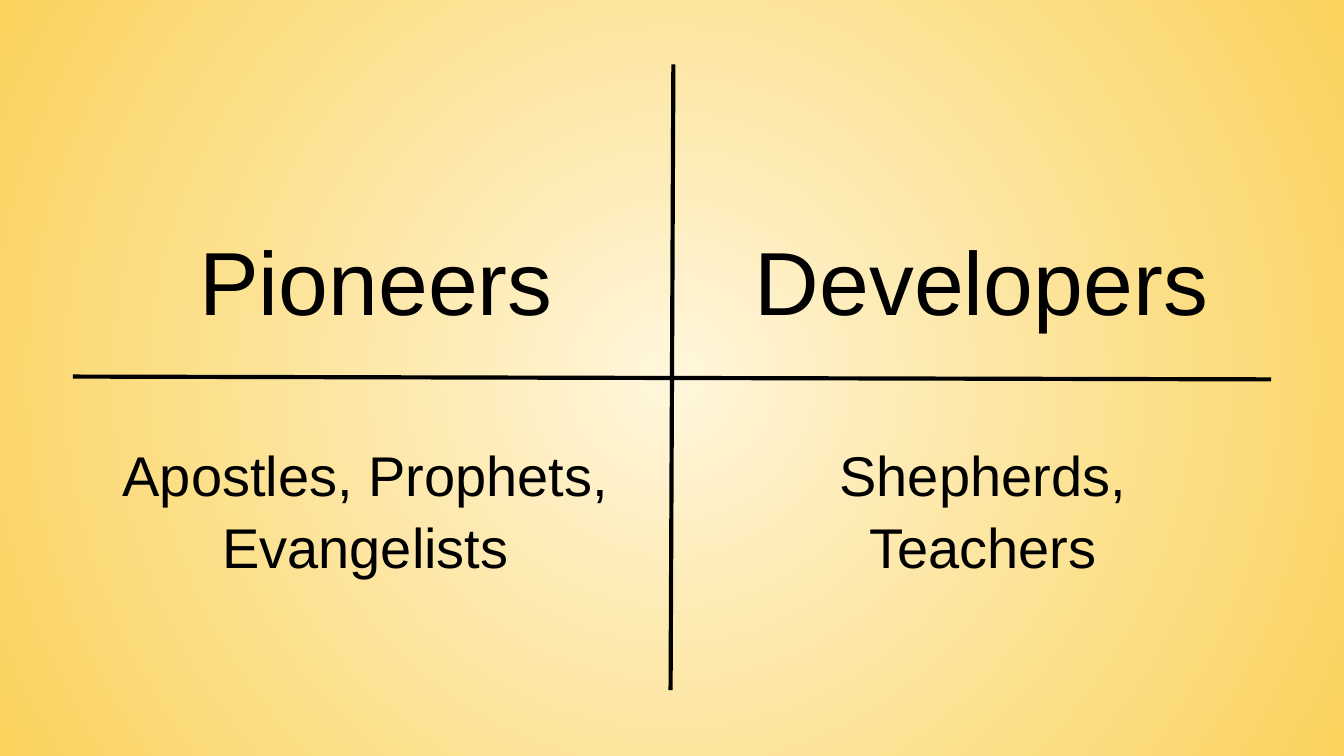
import dataclasses

import pptx
import pptx.dml.color
import pptx.enum.shapes
import pptx.enum.text
import pptx.oxml
import pptx.oxml.ns
import pptx.util

EMU_PER_PX = 9525
BLANK_LAYOUT = 6


@dataclasses.dataclass(frozen=True)
class Theme:
    font: str = "Arial"
    ink: str = "000000"
    glow: str = "FFF6DB"
    gold: str = "FAD25C"
    heading_size: int = 48
    roles_size: int = 30
    line_width: float = 2.25
    line_spacing: float = 1.06
    inset: int = 10


def px(length):
    return pptx.util.Emu(length * EMU_PER_PX)


def rgb(code):
    return pptx.dml.color.RGBColor.from_string(code)


def write_text(frame, text, *, size, font, color, spacing):
    para = frame.paragraphs[0]
    para.alignment = pptx.enum.text.PP_ALIGN.CENTER
    para.line_spacing = spacing
    span = para.add_run()
    span.text = text
    span.font.size = pptx.util.Pt(size)
    span.font.name = font
    span.font.color.rgb = rgb(color)


class SlideBuilder:
    def __init__(self, page, theme):
        self.page = page
        self.theme = theme

    def radial_background(self):
        fill = self.page.background.fill
        fill.gradient()
        for stop, color in zip(fill.gradient_stops, (self.theme.glow, self.theme.gold)):
            stop.color.rgb = rgb(color)
        linear = next(self.page.element.iter(pptx.oxml.ns.qn("a:lin")))
        radial = pptx.oxml.parse_xml(
            f'<a:path {pptx.oxml.ns.nsdecls("a")} path="circle">'
            '<a:fillToRect l="50000" t="50000" r="50000" b="50000"/></a:path>'
        )
        linear.getparent().replace(linear, radial)

    def cross(self, *lines):
        group = self.page.shapes.add_group_shape()
        for ends in lines:
            self.line(group.shapes, *ends)

    def line(self, shapes, x1, y1, x2, y2):
        connector = shapes.add_connector(
            pptx.enum.shapes.MSO_CONNECTOR.STRAIGHT, px(x1), px(y1), px(x2), px(y2)
        )
        connector.line.color.rgb = rgb(self.theme.ink)
        connector.line.width = pptx.util.Pt(self.theme.line_width)
        effects = pptx.oxml.parse_xml(f'<a:effectLst {pptx.oxml.ns.nsdecls("a")}/>')
        connector.element.spPr.append(effects)

    def text(self, text, left, top, width, height, size):
        box = self.page.shapes.add_textbox(px(left), px(top), px(width), px(height))
        frame = box.text_frame
        frame.word_wrap = True
        frame.margin_left = frame.margin_right = px(self.theme.inset)
        frame.margin_top = frame.margin_bottom = px(self.theme.inset)
        write_text(
            frame,
            text,
            size=size,
            font=self.theme.font,
            color=self.theme.ink,
            spacing=self.theme.line_spacing,
        )

    def heading(self, text, left, width):
        self.text(text, left, 147, width, 84, self.theme.heading_size)

    def roles(self, text, left):
        self.text(text, left, 302, 374, 115, self.theme.roles_size)


def main():
    deck = pptx.Presentation()
    deck.slide_width, deck.slide_height = px(960), px(540)
    page = deck.slides.add_slide(deck.slide_layouts[BLANK_LAYOUT])
    builder = SlideBuilder(page, Theme())
    builder.radial_background()
    builder.cross((481, 46, 479, 493), (52, 269, 908, 271))
    builder.heading("Pioneers", 122, 293)
    builder.heading("Developers", 525, 352)
    builder.roles("Apostles, Prophets, Evangelists", 74)
    builder.roles("Shepherds, Teachers", 515)
    deck.save("out.pptx")


if __name__ == "__main__":
    main()
